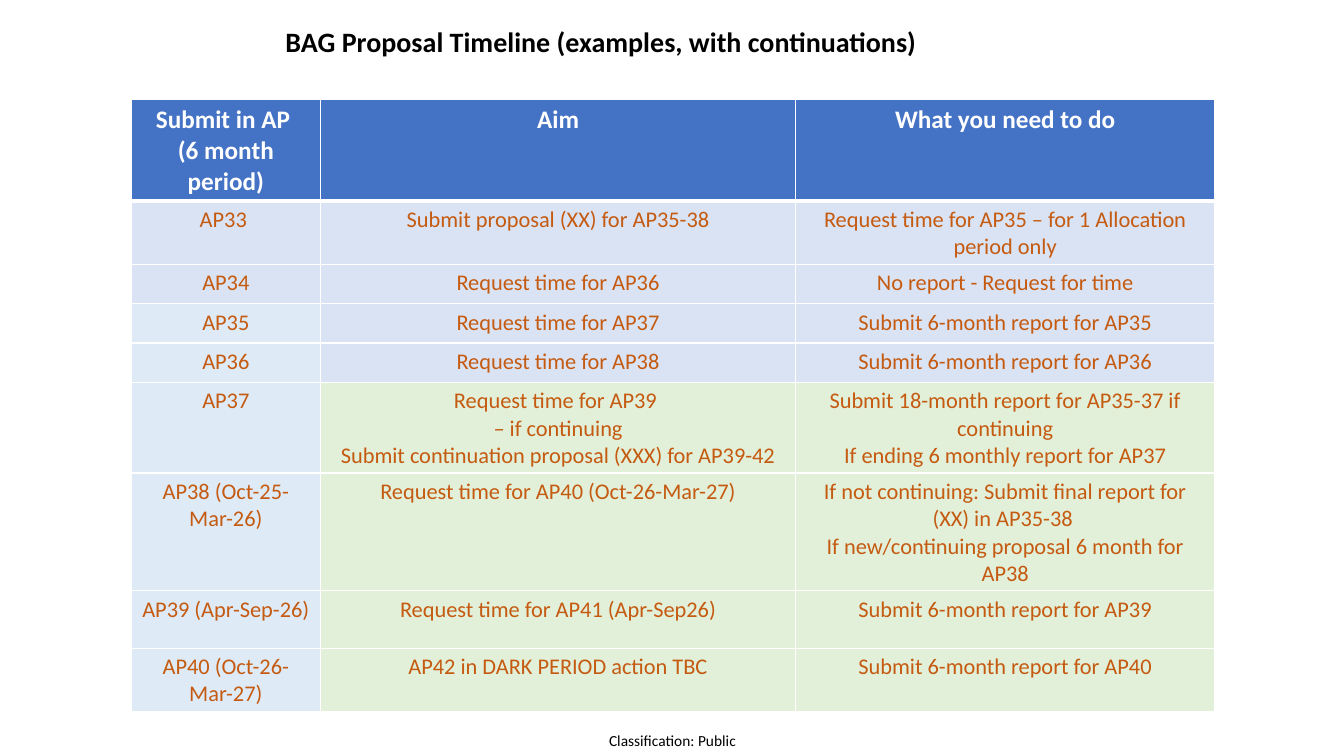
from typing import NamedTuple

from lxml.etree import SubElement
from pptx import Presentation
from pptx.dml.color import RGBColor
from pptx.enum.text import MSO_AUTO_SIZE, PP_ALIGN
from pptx.oxml.ns import qn
from pptx.util import Inches, Pt

FONT = "Calibri"
BLACK, WHITE, ORANGE = "000000", "FFFFFF", "C55A11"
HEADER, BLUE, PALE, GREEN = "4472C4", "DAE3F3", "DEEBF7", "E2F0D9"


class Style(NamedTuple):
    size: float
    color: str
    bold: bool = False


class Label(NamedTuple):
    text: str
    left: float
    top: float
    width: float
    height: float
    style: Style
    align: PP_ALIGN
    inset: tuple[float, float]
    wrap: bool


class Row(NamedTuple):
    height: float
    texts: tuple[str, str, str]
    fills: tuple[str, str, str]


HEAD_STYLE = Style(18, WHITE, True)
BODY_STYLE = Style(16, ORANGE)

LABELS = [
    Label("Classification: Public", 6.04, 7.25, 1.29, 0.18, Style(11, BLACK),
          PP_ALIGN.LEFT, (0, 0), False),
    Label("BAG Proposal Timeline (examples, with continuations)", 1.87, 0.19, 8.18, 0.44,
          Style(20, BLACK, True), PP_ALIGN.CENTER, (0.1, 0.05), True),
]

COLUMNS = [1.88, 4.71, 4.16]
FIRST_PERIODS = (BLUE, BLUE, BLUE)
RUNNING = (PALE, BLUE, BLUE)
CONTINUING = (PALE, GREEN, GREEN)
ROWS = [
    Row(0.97, ("Submit in AP \n(6 month period)", "Aim", "What you need to do"),
        (HEADER, HEADER, HEADER)),
    Row(0.39, ("AP33 ", "Submit proposal (XX) for AP35-38",
               "Request time for AP35 – for 1 Allocation period only"), FIRST_PERIODS),
    Row(0.39, ("AP34", "Request time for AP36", "No report - Request for time"), FIRST_PERIODS),
    Row(0.39, ("AP35", "Request time for AP37", "Submit 6-month report for AP35"), RUNNING),
    Row(0.39, ("AP36", "Request time for AP38", "Submit 6-month report for AP36"), RUNNING),
    Row(0.39, ("AP37",
               "Request time for AP39 \n– if continuing\n"
               "Submit continuation proposal (XXX) for AP39-42",
               "Submit 18-month report for AP35-37 if continuing\n"
               "If ending 6 monthly report for AP37"), CONTINUING),
    Row(0.35, ("AP38 (Oct-25-Mar-26)", "Request time for AP40 (Oct-26-Mar-27)",
               "If not continuing: Submit final report for (XX) in AP35-38 \n"
               "If new/continuing proposal 6 month for AP38"), CONTINUING),
    Row(0.57, ("AP39 (Apr-Sep-26)", "Request time for AP41 (Apr-Sep26)",
               "Submit 6-month report for AP39"), CONTINUING),
    Row(0.57, ("AP40 (Oct-26-Mar-27)", "AP42 in DARK PERIOD action TBC",
               "Submit 6-month report for AP40"), CONTINUING),
]


def rgb(color: str) -> RGBColor:
    return RGBColor.from_string(color)


def write(tf, text: str, style: Style, align: PP_ALIGN) -> None:
    """Fill a text frame with one paragraph per line of text."""
    for i, line in enumerate(text.split("\n")):
        p = tf.add_paragraph() if i else tf.paragraphs[0]
        p.alignment = align
        r = p.add_run()
        r.text = line
        r.font.name = FONT
        r.font.size = Pt(style.size)
        r.font.bold = style.bold
        r.font.color.rgb = rgb(style.color)


def add_label(s, label: Label) -> None:
    sp = s.shapes.add_textbox(Inches(label.left), Inches(label.top),
                              Inches(label.width), Inches(label.height))
    tf = sp.text_frame
    tf.word_wrap = label.wrap
    tf.auto_size = MSO_AUTO_SIZE.SHAPE_TO_FIT_TEXT
    across, down = label.inset
    tf.margin_left = tf.margin_right = Inches(across)
    tf.margin_top = tf.margin_bottom = Inches(down)
    write(tf, label.text, label.style, label.align)


def add_borders(cell, top: float, bottom: float) -> None:
    """Draw white cell borders; widths in points, 1 at the sides."""
    props = cell._tc.get_or_add_tcPr()
    for side, width in (("L", 1), ("R", 1), ("T", top), ("B", bottom)):
        line = SubElement(props, qn(f"a:ln{side}"), w=str(Pt(width)))
        fill = SubElement(line, qn("a:solidFill"))
        SubElement(fill, qn("a:srgbClr"), val=WHITE)


def add_timeline(s) -> None:
    frame = s.shapes.add_table(len(ROWS), len(COLUMNS), Inches(1.3), Inches(0.99),
                               Inches(sum(COLUMNS)), Inches(6.07))
    table = frame.table
    for column, width in zip(table.columns, COLUMNS):
        column.width = Inches(width)
    for i, row in enumerate(ROWS):
        table.rows[i].height = Inches(row.height)
        for j, (text, fill) in enumerate(zip(row.texts, row.fills)):
            cell = table.cell(i, j)
            add_borders(cell, 3 if i == 1 else 1, 3 if i == 0 else 1)
            cell.fill.solid()
            cell.fill.fore_color.rgb = rgb(fill)
            write(cell.text_frame, text, BODY_STYLE if i else HEAD_STYLE, PP_ALIGN.CENTER)
    # Rows grow with their text, so the frame is taller than their minimum heights.
    frame.height = Inches(6.07)


def main() -> None:
    prs = Presentation()
    prs.slide_width, prs.slide_height = Inches(13.33), Inches(7.5)
    s = prs.slides.add_slide(prs.slide_layouts[6])
    for label in LABELS:
        add_label(s, label)
    add_timeline(s)
    prs.save("out.pptx")


if __name__ == "__main__":
    main()
